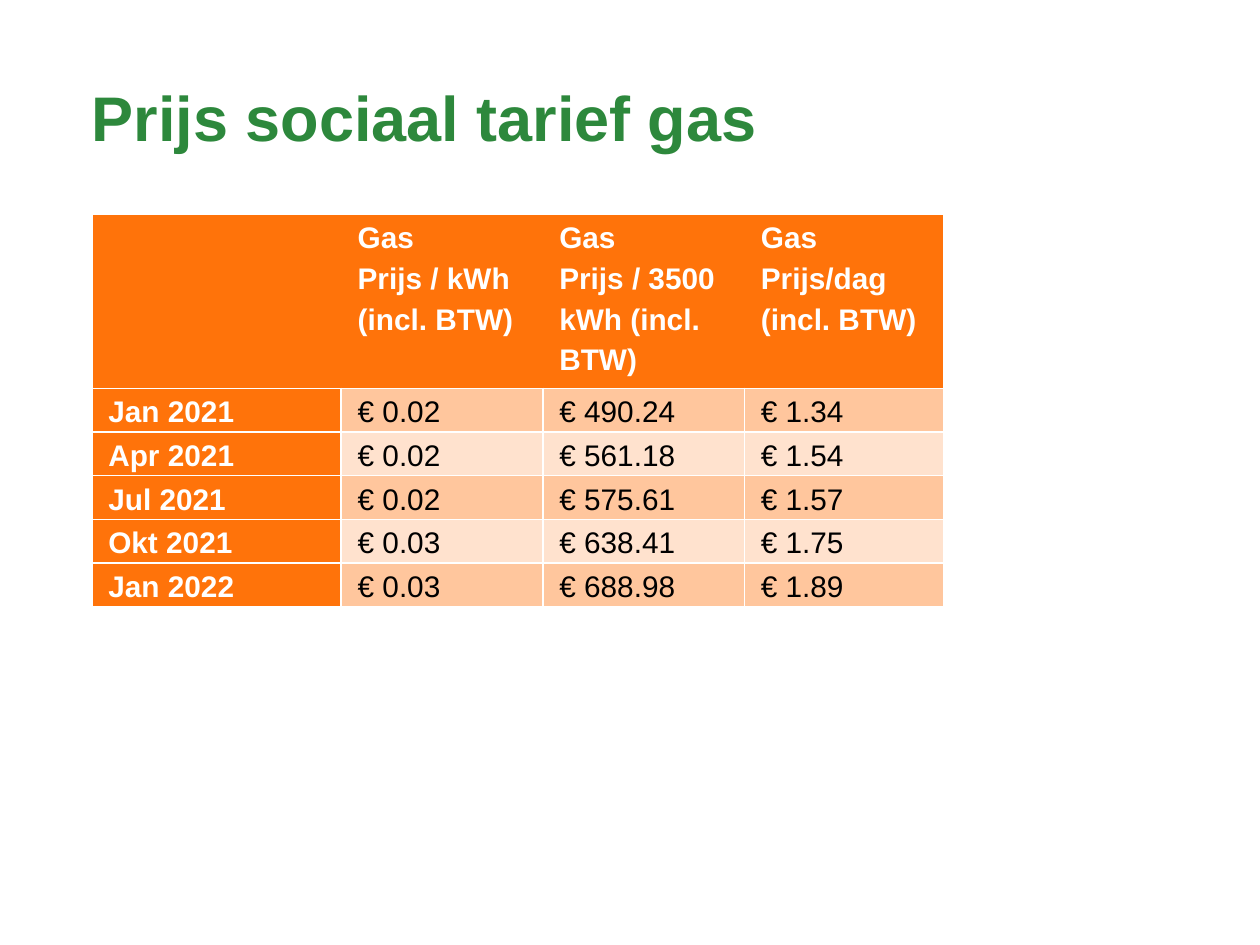
from pptx import Presentation
from pptx.dml.color import RGBColor
from pptx.enum.text import MSO_ANCHOR
from pptx.util import Pt
from pptx.oxml.ns import qn
from lxml.etree import SubElement

FONT = "Arial"
WHITE, BLACK, GREEN = "FFFFFF", "000000", "2D883C"
ORANGE, BANDS = "FF730A", ("FFC69D", "FFE2CE")
LEFT = 52.5
COL_WIDTHS = (142.5, 115.2, 115.2, 114)
HEADER_HEIGHT, ROW_HEIGHT = 97.2, 24.3

ROWS = [
    ("", "Gas\nPrijs / kWh (incl. BTW)",
     "Gas\nPrijs / 3500 kWh (incl. BTW)", "Gas\nPrijs/dag (incl. BTW)"),
    ("Jan 2021", "€ 0.02", "€ 490.24", "€ 1.34"),
    ("Apr 2021", "€ 0.02", "€ 561.18", "€ 1.54"),
    ("Jul 2021", "€ 0.02", "€ 575.61", "€ 1.57"),
    ("Okt 2021", "€ 0.03", "€ 638.41", "€ 1.75"),
    ("Jan 2022", "€ 0.03", "€ 688.98", "€ 1.89"),
]


def rgb(color):
    return RGBColor.from_string(color)


def write(tf, text, size, color, bold, spacing):
    for i, line in enumerate(text.split("\n")):
        p = tf.paragraphs[0] if i == 0 else tf.add_paragraph()
        p.line_spacing = spacing
        p.font.size = Pt(size)
        if line:
            r = p.add_run()
            r.text = line
            r.font.name = FONT
            r.font.size = Pt(size)
            r.font.bold = bold
            r.font.color.rgb = rgb(color)


def add_title(s, text):
    tf = s.shapes.add_textbox(Pt(LEFT), Pt(51), Pt(487.5), Pt(79)).text_frame
    tf.word_wrap = True
    tf.vertical_anchor = MSO_ANCHOR.TOP
    tf.margin_left = tf.margin_right = tf.margin_top = tf.margin_bottom = 0
    write(tf, text, 36, GREEN, True, 0.86)


def set_borders(cell, sides):
    """Draw white lines on the given sides and none on the others."""
    tc_pr = cell._tc.get_or_add_tcPr()
    for side in "LRTB":
        ln = SubElement(tc_pr, qn(f"a:ln{side}"), w=str(Pt(1)))
        if side in sides:
            fill = SubElement(ln, qn("a:solidFill"))
            SubElement(fill, qn("a:srgbClr"), val=WHITE)
        else:
            SubElement(ln, qn("a:noFill"))


def style_cell(cell, text, fill, color, bold, sides):
    cell.margin_left = cell.margin_right = Pt(9.4)
    cell.margin_top = cell.margin_bottom = 0
    set_borders(cell, sides)
    cell.fill.solid()
    cell.fill.fore_color.rgb = rgb(fill)
    write(cell.text_frame, text, 17, color, bold, 1.22)


def add_price_table(s):
    heights = [HEADER_HEIGHT] + [ROW_HEIGHT] * (len(ROWS) - 1)
    table = s.shapes.add_table(len(ROWS), len(COL_WIDTHS), Pt(LEFT), Pt(122.4),
                               Pt(sum(COL_WIDTHS)), Pt(sum(heights))).table
    for col, width in zip(table.columns, COL_WIDTHS):
        col.width = Pt(width)
    for row, height in zip(table.rows, heights):
        row.height = Pt(height)

    last = len(COL_WIDTHS) - 1
    for i, values in enumerate(ROWS):
        for j, text in enumerate(values):
            heading = i == 0 or j == 0
            fill = ORANGE if heading else BANDS[(i - 1) % 2]
            # The header row has no lines between its cells
            sides = "LRTB" if i else {0: "LTB", last: "RTB"}.get(j, "TB")
            style_cell(table.cell(i, j), text, fill,
                       WHITE if heading else BLACK, heading, sides)


def main():
    prs = Presentation()
    prs.slide_width, prs.slide_height = Pt(720), Pt(540)
    s = prs.slides.add_slide(prs.slide_layouts[6])
    add_title(s, "Prijs sociaal tarief gas")
    add_price_table(s)
    prs.save("out.pptx")


if __name__ == "__main__":
    main()
